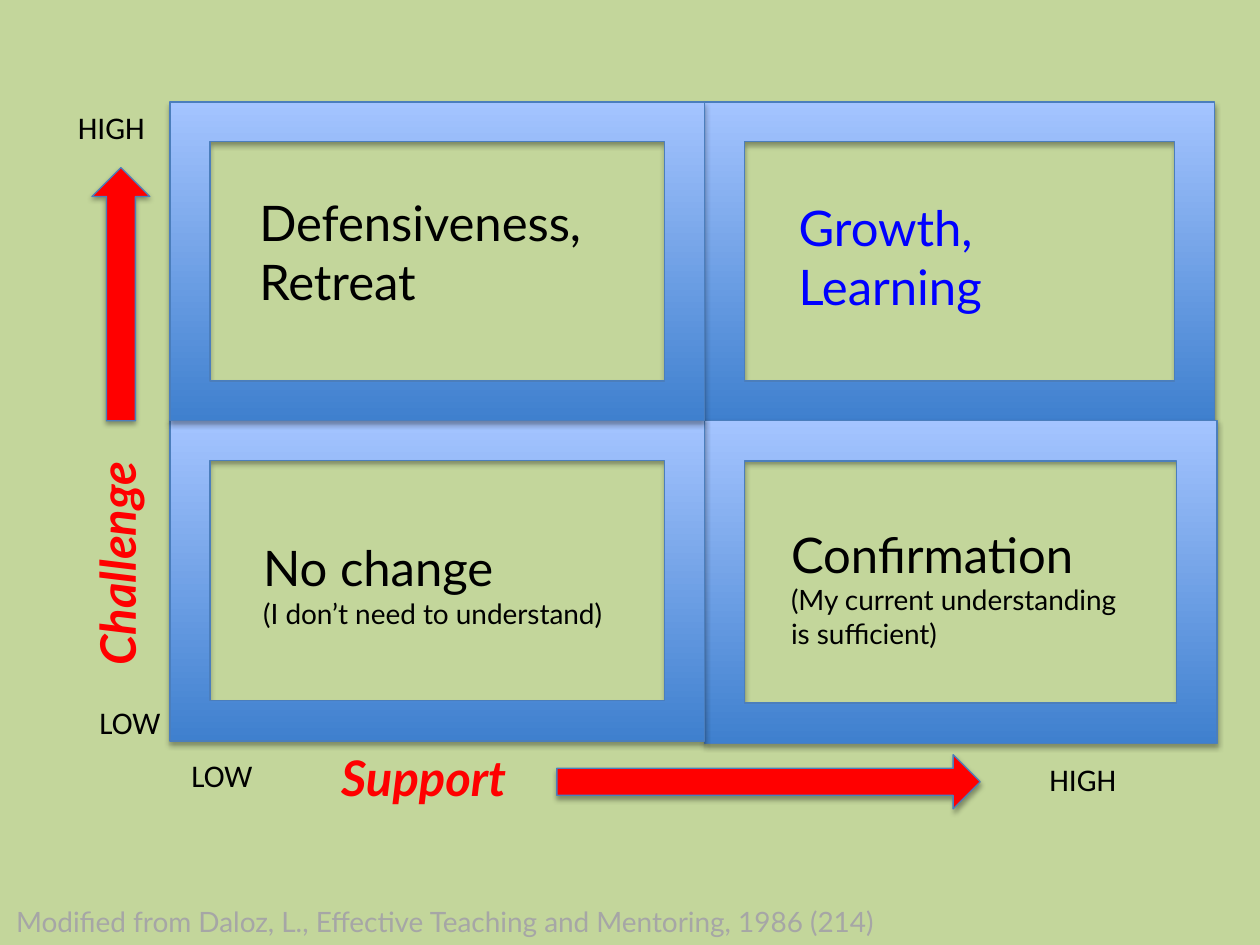
from lxml.etree import SubElement
from pptx import Presentation
from pptx.dml.color import RGBColor
from pptx.enum.shapes import MSO_SHAPE as Preset
from pptx.enum.text import MSO_AUTO_SIZE as AutoSize
from pptx.oxml.ns import qn
from pptx.util import Inches, Pt

BACKGROUND, OUTLINE = "C3D69B", "4B7EBC"
FRAME_BOTTOM, FRAME_TOP = "3F80CE", "A4C4FF"
BLACK, RED, BLUE, GRAY = "000000", "FF0000", "0000FF", "A6A6A6"
HEADING, DETAIL, SCALE = 28, 16, 18
COLUMNS, ROWS = (1.35, 5.59), (0.81, 3.34)


def rgb(color):
    return RGBColor.from_string(color)


def add_shadow(shape):
    """Give the shape a soft shadow falling straight down."""
    shape.shadow.inherit = False
    effects = shape._element.spPr.find(qn("a:effectLst"))
    shadow = SubElement(effects, qn("a:outerShdw"), blurRad=str(Pt(3.1)),
                        dist=str(Pt(1.8)), dir="5400000", rotWithShape="0")
    color = SubElement(shadow, qn("a:srgbClr"), val=BLACK)
    SubElement(color, qn("a:alpha"), val="35000")


def add_preset(slide, preset, *box):
    shape = slide.shapes.add_shape(preset, *map(Inches, box))
    shape.line.color.rgb = rgb(OUTLINE)
    shape.line.width = Pt(0.75)
    add_shadow(shape)
    return shape


def add_frame(slide, column, row, width, height):
    frame = add_preset(slide, Preset.FRAME, COLUMNS[column], ROWS[row], width, height)
    frame.fill.gradient()
    frame.fill.gradient_angle = 90
    for stop, color in zip(frame.fill.gradient_stops, (FRAME_BOTTOM, FRAME_TOP)):
        stop.color.rgb = rgb(color)


def add_arrow(slide, preset, *box):
    arrow = add_preset(slide, preset, *box)
    arrow.fill.solid()
    arrow.fill.fore_color.rgb = rgb(RED)


def add_text(slide, box, lines, color=BLACK, font="Lato", strong=False):
    """Write (text, size) lines as paragraphs; strong means bold italic."""
    text_box = slide.shapes.add_textbox(*map(Inches, box))
    frame = text_box.text_frame
    frame.word_wrap = True
    frame.auto_size = AutoSize.SHAPE_TO_FIT_TEXT
    for index, (text, size) in enumerate(lines):
        paragraph = frame.add_paragraph() if index else frame.paragraphs[0]
        run = paragraph.add_run()
        run.text = text
        run.font.name = font
        run.font.size = Pt(size)
        run.font.color.rgb = rgb(color)
        if strong:
            run.font.bold = run.font.italic = True
    return text_box


def add_quadrants(slide):
    add_frame(slide, 1, 0, 4.05, 2.53)
    add_frame(slide, 1, 1, 4.07, 2.56)
    add_frame(slide, 0, 1, 4.24, 2.54)
    add_frame(slide, 0, 0, 4.24, 2.53)
    add_text(slide, (6.24, 1.52, 2.57, 1.04),
             [("Growth,", HEADING), ("Learning", HEADING)], BLUE)
    add_text(slide, (1.96, 1.48, 4.27, 1.04),
             [("Defensiveness,", HEADING), ("Retreat", HEADING)])
    add_text(slide, (1.99, 4.22, 3.18, 0.84),
             [("No change", HEADING), ("(I don’t need to understand)", DETAIL)])
    add_text(slide, (6.18, 4.11, 2.96, 1.11),
             [("Confirmation", HEADING),
              ("(My current understanding is sufficient)", DETAIL)])


def add_axes(slide):
    challenge = add_text(slide, (-0.75, 3.42, 3.35, 0.57),
                         [("Challenge", HEADING)], RED, strong=True)
    challenge.rotation = 270
    add_arrow(slide, Preset.UP_ARROW, 0.73, 1.33, 0.46, 2.01)
    add_text(slide, (2.61, 5.88, 2.51, 0.57), [("Support", HEADING)], RED, strong=True)
    add_arrow(slide, Preset.RIGHT_ARROW, 4.42, 5.99, 3.36, 0.43)


def add_scale_labels(slide):
    for text, left, top, width in (("HIGH", 8.23, 5.98, 1.1), ("HIGH", 0.52, 0.81, 1.1),
                                   ("LOW", 0.69, 5.53, 1.04), ("LOW", 1.42, 5.95, 1.04)):
        add_text(slide, (left, top, width, 0.4), [(text, SCALE)], font="Calibri")


def main():
    presentation = Presentation()
    presentation.slide_width, presentation.slide_height = Inches(10), Inches(7.5)
    slide = presentation.slides.add_slide(presentation.slide_layouts[6])
    slide.background.fill.solid()
    slide.background.fill.fore_color.rgb = rgb(BACKGROUND)
    add_quadrants(slide)
    add_axes(slide)
    add_text(slide, (0.03, 7.13, 10.73, 0.37),
             [("Modified from Daloz, L., Effective Teaching and Mentoring, 1986 (214)",
               DETAIL)], GRAY)
    add_scale_labels(slide)
    presentation.save("out.pptx")


if __name__ == "__main__":
    main()
